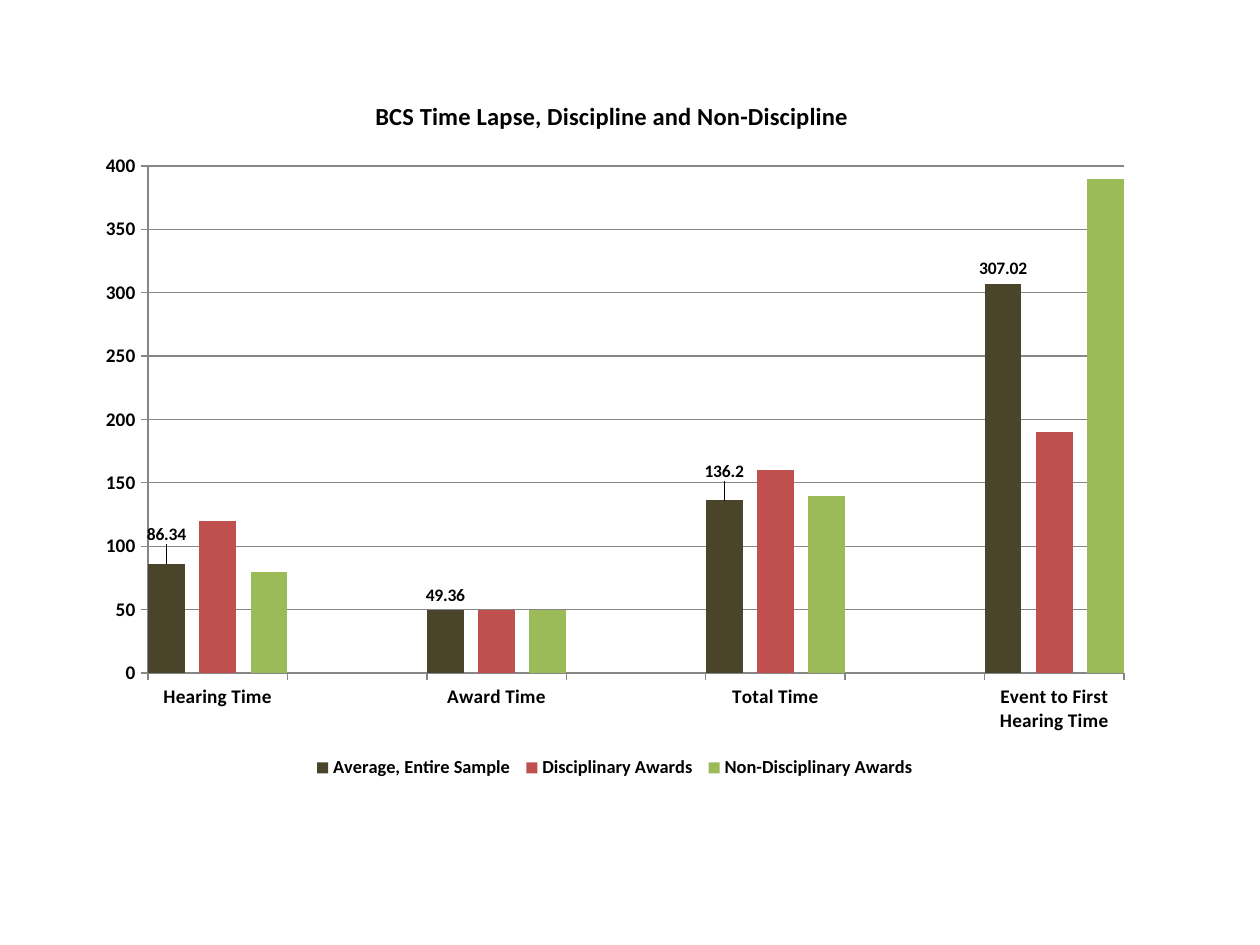
from dataclasses import dataclass

from lxml import etree
from pptx import Presentation
from pptx.chart.data import CategoryChartData
from pptx.dml.color import RGBColor
from pptx.enum.chart import (XL_CHART_TYPE, XL_LABEL_POSITION,
                             XL_LEGEND_POSITION, XL_TICK_MARK)
from pptx.oxml.ns import qn
from pptx.util import Inches, Pt

COLUMNS = XL_CHART_TYPE.COLUMN_CLUSTERED
OUTSIDE_END = XL_LABEL_POSITION.OUTSIDE_END
LEGEND_BOTTOM = XL_LEGEND_POSITION.BOTTOM
TICK_OUT = XL_TICK_MARK.OUTSIDE
C15 = "http://schemas.microsoft.com/office/drawing/2012/chart"
LABEL_EXTENSION = "{CE6537A1-D6FC-4f65-9D91-7224C49458BB}"


@dataclass(frozen=True)
class Theme:
    font: str = "Calibri"
    text: str = "000000"
    rule: str = "868686"
    base_size: float = 10
    legend_size: float = 10.5
    axis_size: float = 11
    title_size: float = 14


THEME = Theme()
TITLE = "BCS Time Lapse, Discipline and Non-Discipline"
MEASURES = ["Hearing Time", "Award Time", "Total Time",
            "Event to First Hearing Time"]
GROUPS = [
    ("Average, Entire Sample", "4A452A", [86.34, 49.36, 136.2, 307.02]),
    ("Disciplinary Awards", "C0504D", [120, 50, 160, 190]),
    ("Non-Disciplinary Awards", "9BBB59", [80, 50, 140, 390]),
]
RAISED_LABELS = (0, 4)  # category slots whose label sits above its bar


def spaced(items, blank):
    """Put one empty category slot between neighbouring items."""
    slots = [blank] * (2 * len(items) - 1)
    slots[::2] = items
    return slots


def style_font(font, size):
    font.name = THEME.font
    font.size = Pt(size)
    font.bold = True
    font.color.rgb = RGBColor.from_string(THEME.text)


def style_rule(line):
    line.color.rgb = RGBColor.from_string(THEME.rule)
    line.width = Pt(0.75)


def place(part, index, **settings):
    """Give a chart part a manual layout, in shares of the chart's size."""
    for old in part.findall(qn("c:layout")):
        part.remove(old)
    layout = etree.Element(qn("c:layout"))
    manual = etree.SubElement(layout, qn("c:manualLayout"))
    for tag, value in settings.items():
        etree.SubElement(manual, qn(f"c:{tag}")).set("val", str(value))
    part.insert(index, layout)


def hide_leader_lines(labels_part):
    extensions = etree.SubElement(labels_part, qn("c:extLst"))
    extension = etree.SubElement(extensions, qn("c:ext"), nsmap={"c15": C15})
    extension.set("uri", LABEL_EXTENSION)
    etree.SubElement(extension, f"{{{C15}}}showLeaderLines").set("val", "0")


def add_time_chart(slide, slide_width, slide_height):
    data = CategoryChartData()
    data.categories = spaced(MEASURES, "")
    for name, _, days in GROUPS:
        data.add_series(name, spaced(days, None))
    frame = slide.shapes.add_chart(
        COLUMNS, Inches(0.67), Inches(0.58),
        int(slide_width * 0.842), int(slide_height * 0.756), data)
    return frame.chart


def style_title(chart):
    paragraph = chart.chart_title.text_frame.paragraphs[0]
    run = paragraph.add_run()
    run.text = TITLE
    style_font(run.font, THEME.title_size)
    chart.chart_title.include_in_layout = False
    place(chart.chart_title._element, 1,
          xMode="edge", yMode="edge", x=0.27, y=0.03)


def style_axes(chart):
    for axis in (chart.category_axis, chart.value_axis):
        axis.major_tick_mark = TICK_OUT
        style_font(axis.tick_labels.font, THEME.axis_size)
        style_rule(axis.format.line)
    days = chart.value_axis
    days.minimum_scale, days.maximum_scale, days.major_unit = 0, 400, 50
    days.has_major_gridlines = True
    style_rule(days.major_gridlines.format.line)


def style_columns(plot):
    plot.gap_width = 0
    plot.overlap = -39
    plot.vary_by_categories = False
    for series, (_, color, _) in zip(plot.series, GROUPS):
        series.format.fill.solid()
        series.format.fill.fore_color.rgb = RGBColor.from_string(color)


def label_average(series):
    labels = series.data_labels
    labels.show_value = True
    labels.position = OUTSIDE_END
    style_font(labels.font, THEME.base_size)
    for slot in RAISED_LABELS:
        label = series.points[slot].data_label
        style_font(label.font, THEME.base_size)
        label.position = OUTSIDE_END
    for label_part in series._element.iter(qn("c:dLbl")):
        place(label_part, 1, x=0, y=-0.02)
    hide_leader_lines(series._element.find(qn("c:dLbls")))


def style_legend(chart):
    chart.has_legend = True
    legend = chart.legend
    legend.position = LEGEND_BOTTOM
    legend.include_in_layout = False
    style_font(legend.font, THEME.legend_size)
    place(legend._element, 1, xMode="edge", yMode="edge",
          x=0.21, y=0.96, w=0.58, h=0.05)


def main():
    deck = Presentation()
    deck.slide_width, deck.slide_height = Inches(10), Inches(7.5)
    slide = deck.slides.add_slide(deck.slide_layouts[6])

    # Chart and its wording
    chart = add_time_chart(slide, deck.slide_width, deck.slide_height)
    style_font(chart.font, THEME.base_size)
    style_title(chart)
    style_legend(chart)

    # Plot area
    style_axes(chart)
    plot = chart.plots[0]
    style_columns(plot)
    label_average(plot.series[0])
    place(chart._chartSpace.find(".//" + qn("c:plotArea")), 0,
          layoutTarget="inner", xMode="edge", yMode="edge",
          x=0.06, y=0.13, w=0.92, h=0.71)

    deck.save("out.pptx")


if __name__ == "__main__":
    main()
